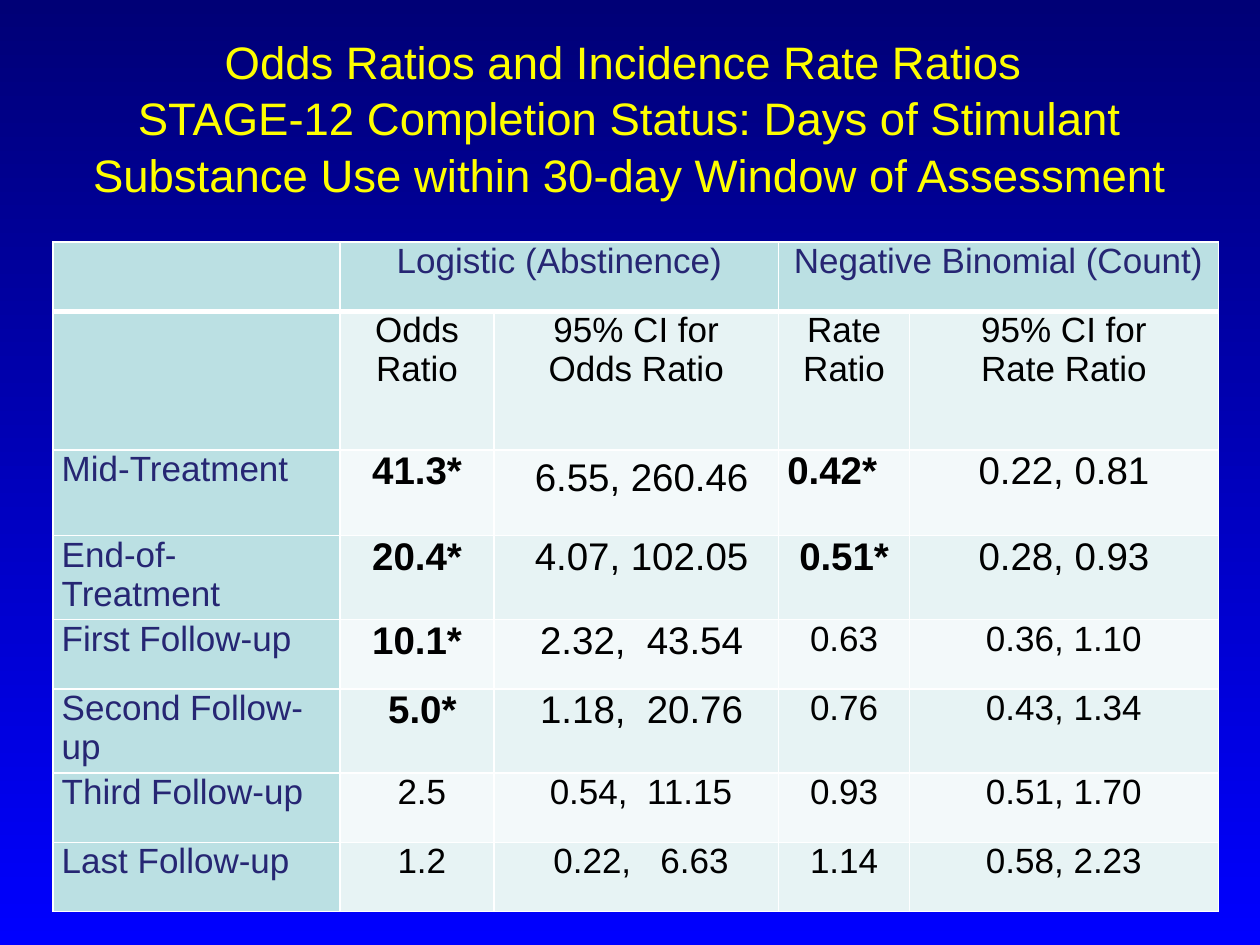
from lxml import etree
from pptx import Presentation
from pptx.dml.color import RGBColor
from pptx.enum.text import MSO_ANCHOR, PP_ALIGN
from pptx.oxml.ns import qn
from pptx.util import Inches, Pt

LEFT, CENTER = PP_ALIGN.LEFT, PP_ALIGN.CENTER
MIDDLE = MSO_ANCHOR.MIDDLE

NIGHT = RGBColor(0x00, 0x00, 0x76)
BLUE = RGBColor(0x00, 0x00, 0xFF)
YELLOW = RGBColor(0xFF, 0xFF, 0x00)
WHITE = RGBColor(0xFF, 0xFF, 0xFF)
BLACK = RGBColor(0x00, 0x00, 0x00)
INDIGO = RGBColor(0x26, 0x26, 0x73)
TEAL = RGBColor(0xBB, 0xE0, 0xE3)
BANDS = RGBColor(0xE7, 0xF3, 0xF4), RGBColor(0xF3, 0xF9, 0xFA)

WIDE, HIGH = 10, 7.5
COLS = [2.28, 1.22, 2.26, 1.04, 2.45]
ROWS = [0.55, 1.1, 0.68, 0.62, 0.55, 0.62, 0.55, 0.55]

TITLE = ("Odds Ratios and Incidence Rate Ratios \vSTAGE-12 Completion Status: "
         "Days of Stimulant Substance Use within 30-day Window of Assessment")
DATA = [
    ["", "Logistic (Abstinence)", "", "Negative Binomial (Count)", ""],
    ["", "Odds Ratio", "95% CI for\nOdds Ratio", "Rate Ratio", "95% CI for\nRate Ratio"],
    ["Mid-Treatment", "41.3*", " 6.55, 260.46", "0.42*", "0.22, 0.81"],
    ["End-of-Treatment", "20.4*", " 4.07, 102.05", "0.51*", "0.28, 0.93"],
    ["First Follow-up", "10.1*", " 2.32,  43.54", "0.63", "0.36, 1.10"],
    ["Second Follow-up", " 5.0*", " 1.18,  20.76", "0.76", "0.43, 1.34"],
    ["Third Follow-up", " 2.5", " 0.54,  11.15", "0.93", "0.51, 1.70"],
    ["Last Follow-up", " 1.2", " 0.22,   6.63", "1.14", "0.58, 2.23"],
]


class Deck:
    def __init__(self, font):
        self.font = font
        self.prs = Presentation()
        self.prs.slide_width, self.prs.slide_height = Inches(WIDE), Inches(HIGH)
        self.slide = self.prs.slides.add_slide(self.prs.slide_layouts[6])

    def place(self, x, y, w, h):
        """Turn shares of the slide's size into lengths."""
        return (Inches(x * WIDE), Inches(y * HIGH), Inches(w * WIDE), Inches(h * HIGH))

    def shade(self, top, base):
        fill = self.slide.background.fill
        fill.gradient()
        fill.gradient_angle = 270
        for stop, color in zip(fill.gradient_stops, (top, base)):
            stop.color.rgb = color

    def label(self, frame, text, size, color, align=CENTER, bold=False, space=None):
        frame.word_wrap = True
        frame.text = text
        for para in frame.paragraphs:
            para.alignment = align
            para.line_spacing = space
            font = para.font
            font.name, font.size, font.bold = self.font, Pt(size), bold
            font.color.rgb = color

    def title(self, text, box):
        frame = self.slide.shapes.add_textbox(*self.place(*box)).text_frame
        frame.vertical_anchor = MIDDLE
        self.label(frame, text, 26, YELLOW, space=1.04)

    def table(self, box, cols, rows):
        table = self.slide.shapes.add_table(
            len(rows), len(cols), *self.place(*box)).table
        for col, width in zip(table.columns, cols):
            col.width = Inches(width)
        for row, height in zip(table.rows, rows):
            row.height = Inches(height)
        return table

    def cell(self, cell, fill, base=1):
        """Set margins, fill and white borders; base is the lower border's width."""
        cell.margin_left = cell.margin_right = Inches(0.07)
        cell.margin_top = cell.margin_bottom = 0
        cell.fill.solid()
        cell.fill.fore_color.rgb = fill
        props = cell._tc.get_or_add_tcPr()
        for spot, (side, width) in enumerate(zip("LRTB", (1, 1, 1, base))):
            line = etree.Element(qn("a:ln" + side), w=str(Pt(width)))
            paint = etree.SubElement(line, qn("a:solidFill"))
            etree.SubElement(paint, qn("a:srgbClr"), val=str(WHITE))
            props.insert(spot, line)


def main():
    deck = Deck("Arial")
    deck.shade(NIGHT, BLUE)
    deck.title(TITLE, (0.05, 0.04, 0.9, 1 / 6))

    table = deck.table((0.042, 0.256, sum(COLS) / WIDE, sum(ROWS) / HIGH), COLS, ROWS)
    for c in (1, 3):
        table.cell(0, c).merge(table.cell(0, c + 1))
    for r, row in enumerate(DATA):
        for c, text in enumerate(row):
            cell = table.cell(r, c)
            head = r == 0 or c == 0
            deck.cell(cell, TEAL if head else BANDS[(r + 1) % 2], 3 if r == 0 else 1)
            if not text:
                continue
            # Significant ratios and their intervals are set larger.
            pair = row[c - 1] if c in (2, 4) else text
            size = 22 if pair.endswith("*") else 20
            deck.label(cell.text_frame, text, size, INDIGO if head else BLACK,
                       LEFT if c == 0 or (r, c) == (2, 3) else CENTER,
                       text.endswith("*"), 1.15 if (r, c) == (2, 2) else None)
    deck.prs.save("out.pptx")


if __name__ == "__main__":
    main()
